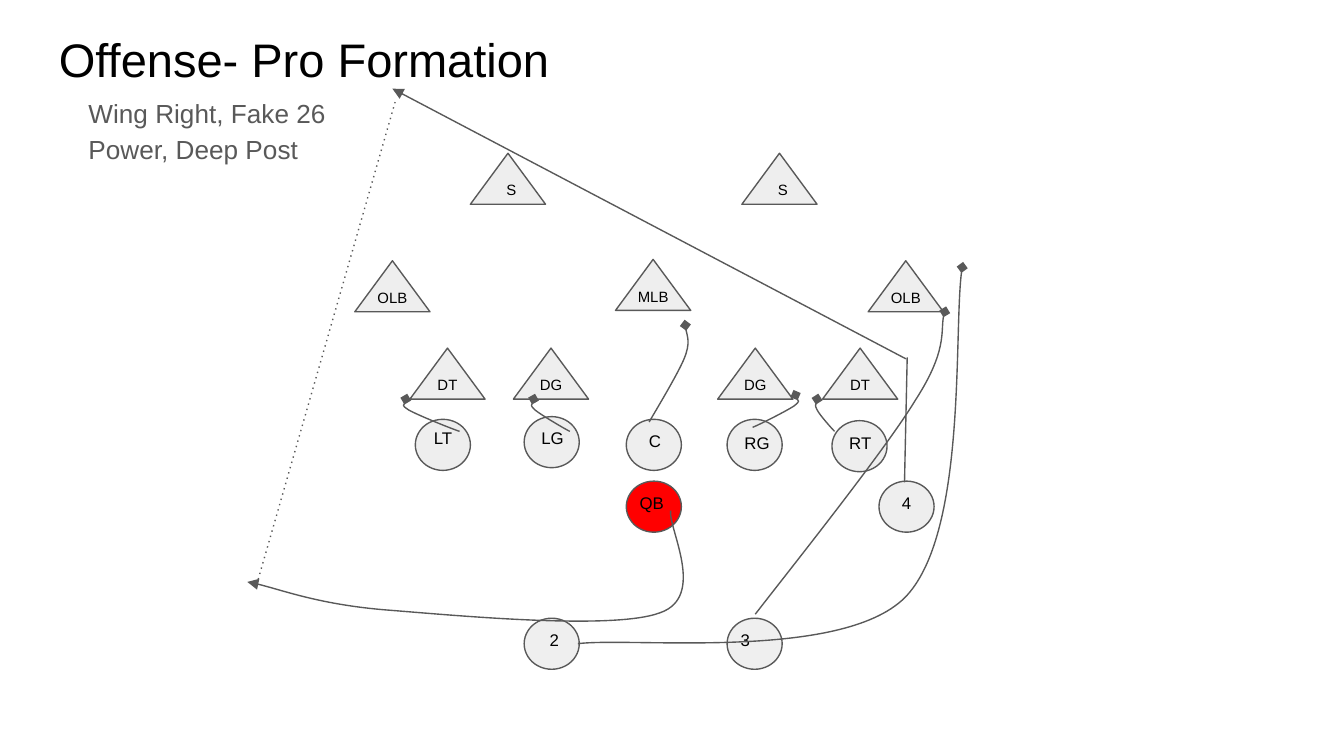
"""Draw the play Wing Right, Fake 26 Power, Deep Post on a 100-column grid of square cells."""
import pptx
import pptx.dml.color
import pptx.enum.shapes
import pptx.enum.text
import pptx.util
from lxml import etree
from pptx.oxml.ns import qn

GREY, BLACK = "595959", "000000"
LEFT = pptx.enum.text.PP_ALIGN.LEFT
CENTER = pptx.enum.text.PP_ALIGN.CENTER
TRIANGLE = pptx.enum.shapes.MSO_SHAPE.FLOWCHART_EXTRACT
CIRCLE = pptx.enum.shapes.MSO_SHAPE.OVAL

presentation = pptx.Presentation()
presentation.slide_width = pptx.util.Inches(10)
presentation.slide_height = presentation.slide_width * 9 // 16
slide = presentation.slides.add_slide(presentation.slide_layouts[6])
cell = presentation.slide_width // 100


def add_text(text, box, size, color=BLACK, alignment=LEFT):
    shape = slide.shapes.add_textbox(*[round(length * cell) for length in box])
    frame = shape.text_frame
    frame.word_wrap = True
    frame.margin_left = frame.margin_right = cell
    frame.margin_top = frame.margin_bottom = cell
    paragraph = frame.paragraphs[0]
    paragraph.alignment = alignment
    run = paragraph.add_run()
    run.text = text
    run.font.name = "Arial"
    run.font.size = pptx.util.Pt(size)
    run.font.color.rgb = pptx.dml.color.RGBColor.from_string(color)
    return paragraph


def style_line(shape, head=None, dash=None):
    shape.line.color.rgb = pptx.dml.color.RGBColor.from_string(GREY)
    shape.line.width = pptx.util.Pt(0.75)
    outline = shape.line._get_or_add_ln()
    if dash:
        etree.SubElement(outline, qn("a:prstDash"), val=dash)
    if head:
        etree.SubElement(outline, qn("a:tailEnd"), type=head)


add_text("Offense- Pro Formation", (3.4, 1.3, 93.2, 6.3), 25.2)
play = add_text("Wing Right, Fake 26 Power, Deep Post", (5.6, 5.9, 21.3, 5.7), 14, GREY)
play.line_spacing = 1.15
play.space_after = pptx.util.Pt(12)

defense = [
    ("S", 35, 11.4), ("S", 55.2, 11.4),
    ("OLB", 26.4, 19.4), ("MLB", 45.8, 19.3), ("OLB", 64.6, 19.4),
    ("DT", 30.5, 25.9), ("DG", 38.2, 25.9), ("DG", 53.4, 25.9), ("DT", 61.2, 25.9),
]
offense = [
    ("LT", 30.9, 31.2, 0.4, -0.1, 3.7, LEFT), ("LG", 39, 31, 0.3, 0.1, 4.1, LEFT),
    ("C", 46.6, 31.2, 0.7, 0.1, 2.9, LEFT), ("RG", 54.1, 31.2, 0.3, 0.2, 4.1, LEFT),
    ("RT", 61.9, 31.3, 0.3, 0.1, 4.1, LEFT), ("QB", 46.6, 35.8, 0, 0.1, 4.1, LEFT),
    ("2", 39, 46, 0.8, 0.1, 2.9, CENTER), ("3", 54.1, 46, -0.1, 0.1, 2.9, CENTER),
    ("4", 65.4, 35.8, 0.6, 0.1, 2.9, CENTER),
]
fills = {"QB": "FF0000", "2": "EFEFEF", "3": "EFEFEF"}
players = [(TRIANGLE, name, x, y, 5.6) for name, x, y in defense]
players += [(CIRCLE, name, x, y, 4.1) for name, x, y, *label in offense]
for kind, name, x, y, width in players:
    shape = slide.shapes.add_shape(
        kind, *[round(length * cell) for length in (x, y, width, 3.8)])
    shape.shadow.inherit = False
    shape.fill.solid()
    shape.fill.fore_color.rgb = pptx.dml.color.RGBColor.from_string(fills.get(name, "EEEEEE"))
    style_line(shape)

for name, x, y in defense:
    offset, width, alignment = (1.7, 2.9, LEFT) if name == "S" else (0.45, 4.7, CENTER)
    add_text(name, (x + offset, y + 1.4, width, 3.4), 8, alignment=alignment)
for name, x, y, right, down, width, alignment in offense:
    add_text(name, (x + right, y + down, width, 3.5), 9, alignment=alignment)

routes = [
    ("diamond", [(56.2, 45.7), (58.2, 43.1), (65.8, 33.6), (68.1, 29.8),
                 (70.5, 26.1), (69.9, 24.3), (70.3, 23.2)]),
    ("diamond", [(43, 47.9), (47, 47.4), (62.5, 49.2), (67.3, 44.5),
                 (72, 39.8), (70.9, 24), (71.6, 19.9)]),
    ("diamond", [(42.4, 32.1), (42, 31.9), (40.3, 30.9), (39.8, 30.5),
                 (39.4, 30.1), (39.7, 29.8), (39.7, 29.7)]),
    ("diamond", [(34.2, 32.1), (33.6, 31.9), (31.1, 30.9), (30.4, 30.5),
                 (29.8, 30.1), (30.3, 29.8), (30.2, 29.7)]),
    ("diamond", [(62.1, 32.1), (61.9, 31.9), (61, 30.9), (60.8, 30.5),
                 (60.6, 30.1), (60.8, 29.8), (60.8, 29.7)]),
    ("diamond", [(56, 31.8), (56.5, 31.6), (58.5, 30.6), (59.1, 30.2),
                 (59.6, 29.8), (59.2, 29.5), (59.2, 29.4)]),
    ("diamond", [(48.3, 31.4), (48.7, 30.7), (50.4, 27.9), (50.9, 26.7),
                 (51.4, 25.5), (51, 24.6), (51, 24.2)]),
    ("triangle", [(49.9, 38), (49.7, 39.3), (52.6, 44.4), (49.1, 45.6),
                  (45.6, 46.9), (34, 45.8), (28.9, 45.4),
                  (23.8, 45), (20.2, 43.6), (18.4, 43.3)]),
]
for head, points in routes:
    start, *controls = [(round(x * cell), round(y * cell)) for x, y in points]
    builder = slide.shapes.build_freeform(*start)
    builder.add_line_segments(controls, close=False)
    shape = builder.convert_to_shape()
    shape.shadow.inherit = False
    shape.fill.background()
    style_line(shape, head)
    outline = next(shape._element.iter(qn("a:path")))
    segments = outline.findall(qn("a:lnTo"))
    for first in range(0, len(segments), 3):
        curve = etree.SubElement(outline, qn("a:cubicBezTo"))
        for segment in segments[first:first + 3]:
            curve.append(segment[0])
            outline.remove(segment)

straight_routes = [
    ((67.3, 35.9), (67.5, 26.6), None, None),
    ((67.4, 26.7), (29.2, 6.6), "triangle", None),
    ((19.1, 43.5), (29.4, 7.6), None, "dot"),
]
for start, end, head, dash in straight_routes:
    connector = slide.shapes.add_connector(
        pptx.enum.shapes.MSO_CONNECTOR.STRAIGHT,
        *[round(length * cell) for length in start + end])
    style_line(connector, head, dash)
    etree.SubElement(connector._element.spPr, qn("a:effectLst"))

presentation.save("out.pptx")
